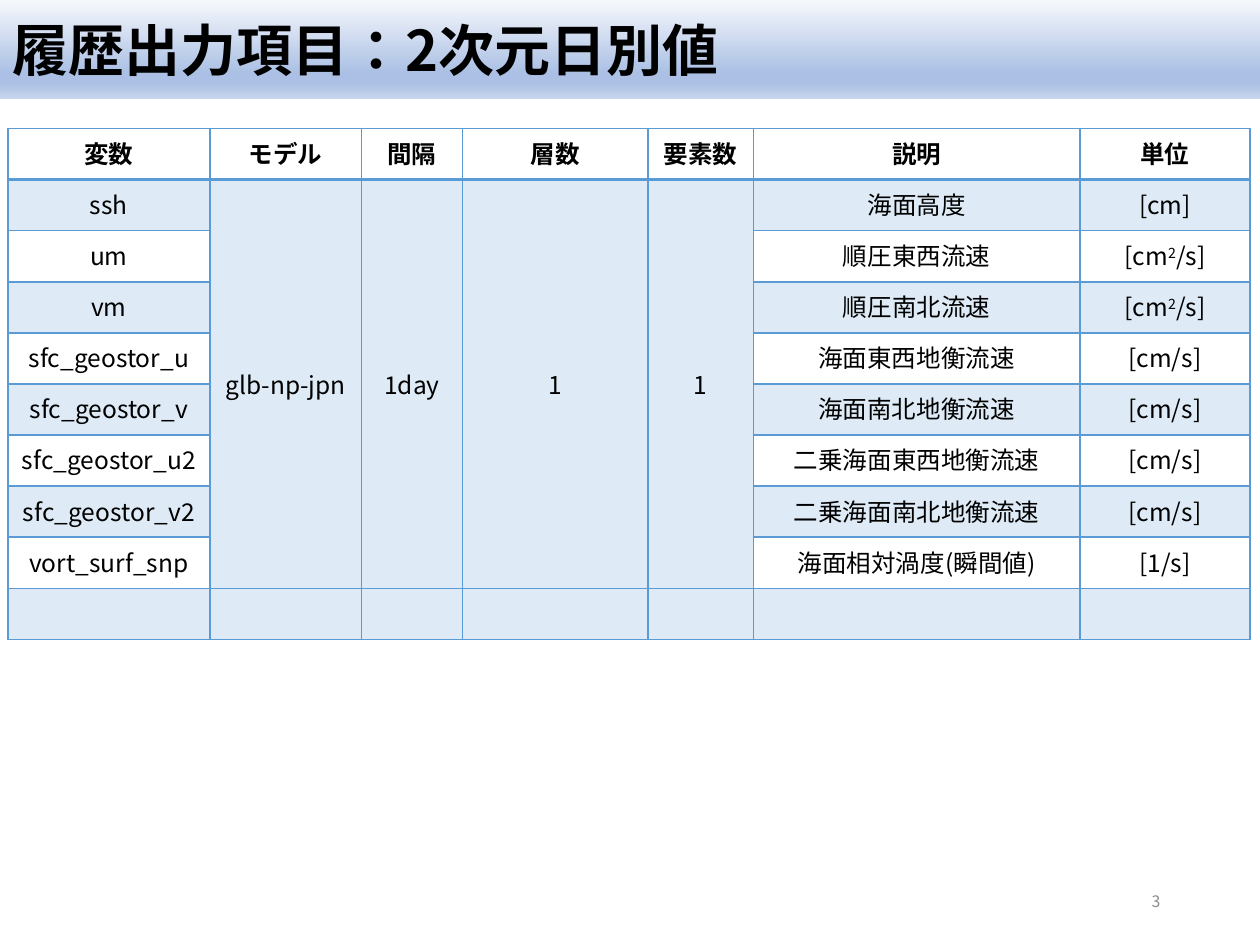
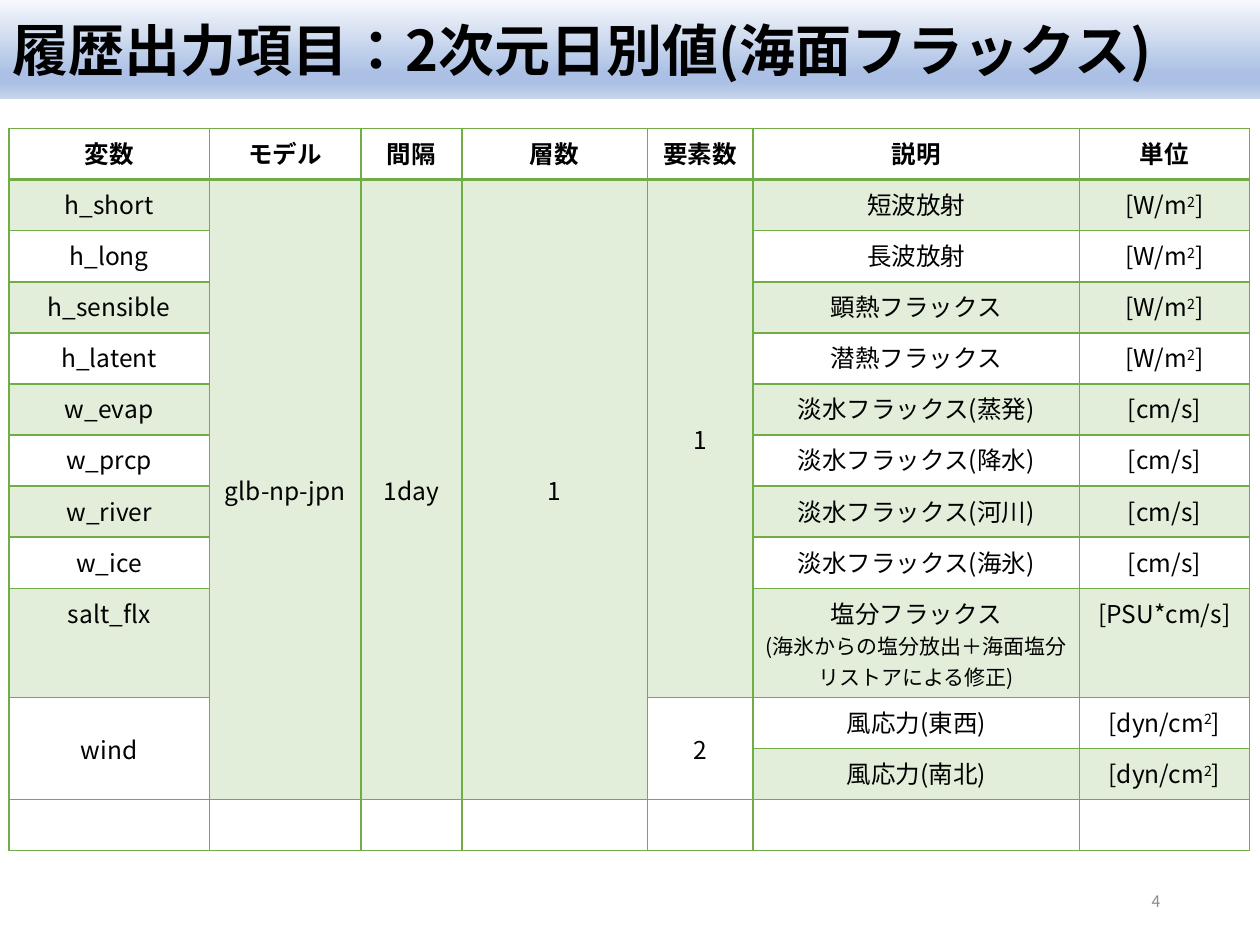
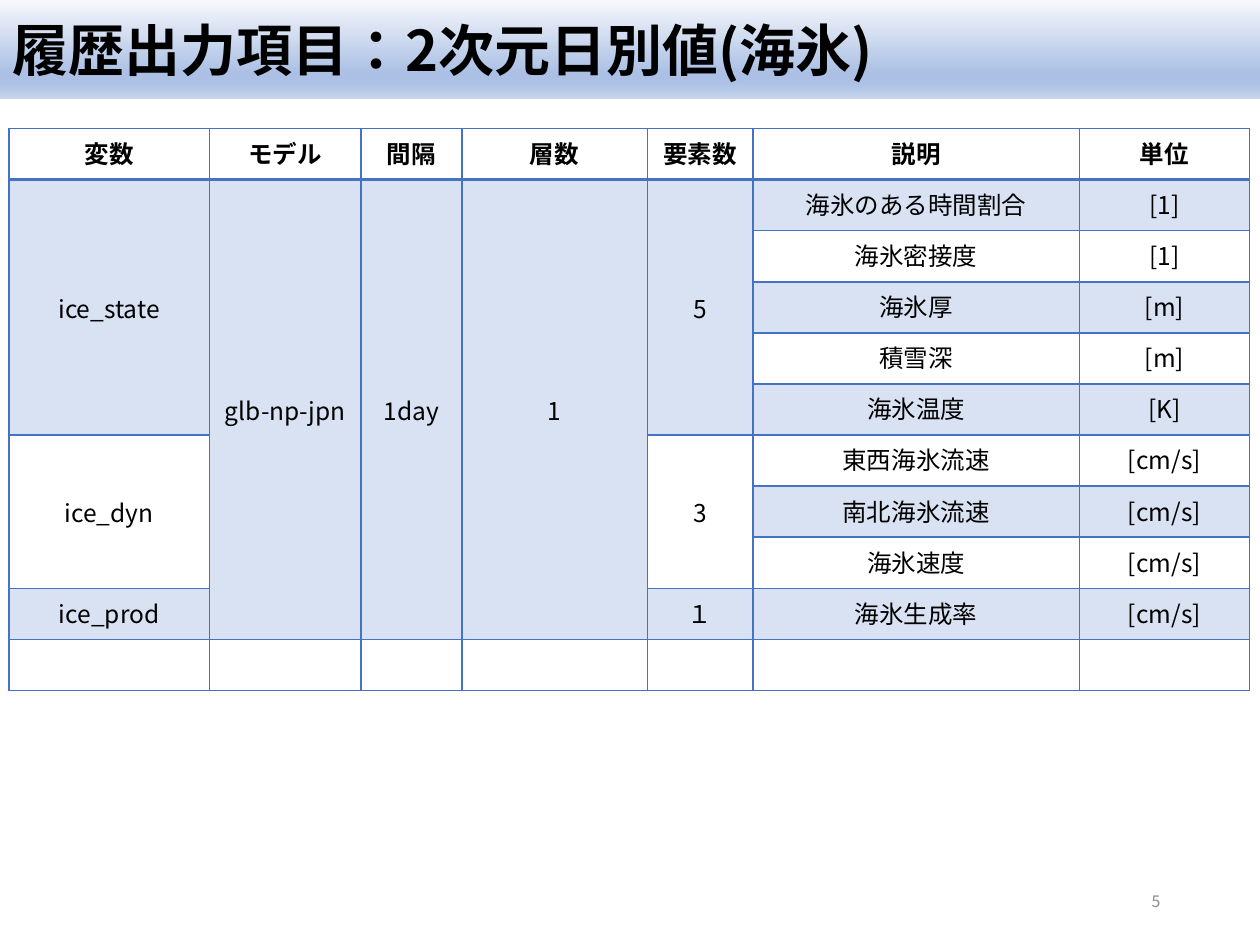
import pptx
import pptx.util
import pptx.dml.color
import pptx.enum.lang
import pptx.enum.text
import pptx.oxml
import pptx.oxml.ns
from lxml import etree

Cm, Pt, qn = pptx.util.Cm, pptx.util.Pt, pptx.oxml.ns.qn
ALIGN, ANCHOR = pptx.enum.text.PP_ALIGN, pptx.enum.text.MSO_ANCHOR

# Content: a None cell continues the cell above; ^2 is a superscript
HEADERS = ["変数", "モデル", "間隔", "層数", "要素数", "説明", "単位"]
MODEL = ("glb-np-jpn", "1day", "1")
SHEETS = [
    {"title": "履歴出力項目：2次元日別値", "number": 3, "accent": "sky",
     "left": 0.16, "first": 4.07, "rows": [
         ("ssh", "1", "海面高度", "[cm]"),
         ("um", None, "順圧東西流速", "[cm^2/s]"),
         ("vm", None, "順圧南北流速", "[cm^2/s]"),
         ("sfc_geostor_u", None, "海面東西地衡流速", "[cm/s]"),
         ("sfc_geostor_v", None, "海面南北地衡流速", "[cm/s]"),
         ("sfc_geostor_u2", None, "二乗海面東西地衡流速", "[cm/s]"),
         ("sfc_geostor_v2", None, "二乗海面南北地衡流速", "[cm/s]"),
         ("vort_surf_snp", None, "海面相対渦度(瞬間値)", "[1/s]")]},
    {"title": "履歴出力項目：2次元日別値(海面フラックス)", "number": 4, "accent": "green",
     "left": 0.18, "first": 4.04, "rows": [
         ("h_short", "1", "短波放射", "[W/m^2]"),
         ("h_long", None, "長波放射", "[W/m^2]"),
         ("h_sensible", None, "顕熱フラックス", "[W/m^2]"),
         ("h_latent", None, "潜熱フラックス", "[W/m^2]"),
         ("w_evap", None, "淡水フラックス(蒸発)", "[cm/s]"),
         ("w_prcp", None, "淡水フラックス(降水)", "[cm/s]"),
         ("w_river", None, "淡水フラックス(河川)", "[cm/s]"),
         ("w_ice", None, "淡水フラックス(海氷)", "[cm/s]"),
         ("salt_flx", None,
          "塩分フラックス\n(海氷からの塩分放出＋海面塩分リストアによる修正)", "[PSU*cm/s]"),
         ("wind", "2", "風応力(東西)", "[dyn/cm^2]"),
         (None, None, "風応力(南北)", "[dyn/cm^2]")]},
    {"title": "履歴出力項目：2次元日別値(海氷)", "number": 5, "accent": "blue",
     "left": 0.18, "first": 4.04, "rows": [
         ("ice_state", "5", "海氷のある時間割合", "[1]"),
         (None, None, "海氷密接度", "[1]"),
         (None, None, "海氷厚", "[m]"),
         (None, None, "積雪深", "[m]"),
         (None, None, "海氷温度", "[K]"),
         ("ice_dyn", "3", "東西海氷流速", "[cm/s]"),
         (None, None, "南北海氷流速", "[cm/s]"),
         (None, None, "海氷速度", "[cm/s]"),
         ("ice_prod", "１", "海氷生成率", "[cm/s]")]},
]

# Shared style
COLORS = {"text": "000000", "number": "8C8C8C",
          "sky": "5B9BD5", "green": "70AD47", "blue": "4472C4"}
BAND_STOPS = [(0, "F6F8FC"), (74, "ABC0E4"), (83, "ABC0E4"), (100, "C7D5ED")]
FONT = "Noto Sans CJK JP"
OTHER_WIDTHS = [3.06, 2.03, 3.74, 2.13, 6.58, 3.43]
ROW_HEIGHT = 1.03
NOTED_ROW_HEIGHT = 2.2
TABLE_TOP = 2.59


def style(para, size, color="text", bold=False, align=ALIGN.LEFT):
    para.alignment = align
    font = para.font
    font.size, font.bold, font.name = Pt(size), bold, FONT
    font.language_id = pptx.enum.lang.MSO_LANGUAGE_ID.JAPANESE
    font.color.rgb = pptx.dml.color.RGBColor.from_string(COLORS[color])
    defaults = para._p.pPr.find(qn("a:defRPr"))
    etree.SubElement(defaults, qn("a:ea"), typeface=FONT)
    for span in para.runs:
        span.font.language_id = font.language_id


def place(shape, left, top, width, height):
    shape.left, shape.top = Cm(left), Cm(top)
    shape.width, shape.height = Cm(width), Cm(height)


def add_title(page, text):
    title = page.shapes.title
    place(title, 0, 0, 25.4, 2)
    stops = "".join(f'<a:gs pos="{pos * 1000}"><a:srgbClr val="{color}"/></a:gs>'
                    for pos, color in BAND_STOPS)
    title._element.spPr.append(pptx.oxml.parse_xml(
        f'<a:gradFill {pptx.oxml.ns.nsdecls("a")}><a:gsLst>{stops}</a:gsLst>'
        '<a:lin ang="5400000" scaled="0"/></a:gradFill>'))
    frame = title.text_frame
    frame.text = text
    frame.auto_size = pptx.enum.text.MSO_AUTO_SIZE.NONE
    frame.vertical_anchor = ANCHOR.MIDDLE
    style(frame.paragraphs[0], 32, bold=True)


def add_number(page, number):
    box = page.shapes.add_textbox(Cm(16.81), Cm(17.65), Cm(6.83), Cm(1.02))
    frame = box.text_frame
    frame.word_wrap = True
    frame.vertical_anchor = ANCHOR.MIDDLE
    frame.text = str(number)
    style(frame.paragraphs[0], 9, "number", align=ALIGN.RIGHT)


def write_cell(cell, text, bold):
    for index, line in enumerate(text.split("\n")):
        frame = cell.text_frame
        para = frame.add_paragraph() if index else frame.paragraphs[0]
        before, power, after = line.partition("^2")
        for part in filter(None, (before, power[1:], after)):
            span = para.add_run()
            span.text = part
            if power and part == "2":
                span._r.get_or_add_rPr().set("baseline", "30000")
        style(para, 12 if index else 14, bold=bold, align=ALIGN.CENTER)
        if not line:
            para._p.get_or_add_endParaRPr().set("sz", "1400")


def paint_cell(cell, row, accent):
    props = cell._tc.get_or_add_tcPr()
    heavy = {"lnB": row == 0, "lnT": row == 1}
    for side in ("lnL", "lnR", "lnT", "lnB"):
        width = Pt(2 if heavy.get(side) else 1)
        line = etree.SubElement(props, qn("a:" + side), w=str(width))
        fill = etree.SubElement(line, qn("a:solidFill"))
        etree.SubElement(fill, qn("a:srgbClr"), val=accent)
    if row % 2:
        cell.fill.solid()
        cell.fill.fore_color.rgb = pptx.dml.color.RGBColor.from_string(accent)
        shade = props.find(qn("a:solidFill")).find(qn("a:srgbClr"))
        etree.SubElement(shade, qn("a:alpha"), val="20000")
    else:
        cell.fill.background()


def add_variables(page, sheet):
    # Header, data with the shared model columns, and one empty closing row
    grid = [HEADERS]
    for index, (name, count, meaning, unit) in enumerate(sheet["rows"]):
        model = (None,) * len(MODEL) if index else MODEL
        grid.append([name, *model, count, meaning, unit])
    grid.append([""] * len(HEADERS))

    # A row whose description carries a note is taller
    heights = [NOTED_ROW_HEIGHT if any("\n" in (text or "") for text in texts)
               else ROW_HEIGHT for texts in grid]
    widths = [sheet["first"]] + OTHER_WIDTHS
    frame = page.shapes.add_table(len(grid), len(widths), Cm(sheet["left"]), Cm(TABLE_TOP),
                                  Cm(sum(widths)), Cm(sum(heights)))
    table = frame.table
    table.first_row = table.horz_banding = False
    for column, width in zip(table.columns, widths):
        column.width = Cm(width)
    for row, height in zip(table.rows, heights):
        row.height = Cm(height)

    for row, texts in enumerate(grid):
        for col, text in enumerate(texts):
            cell = table.cell(row, col)
            paint_cell(cell, row, COLORS[sheet["accent"]])
            write_cell(cell, text or "", bold=row == 0)
            if text is None:
                continue
            last = row
            while last + 1 < len(grid) and grid[last + 1][col] is None:
                last += 1
            if last > row:
                cell.merge(table.cell(last, col))
                cell.vertical_anchor = ANCHOR.MIDDLE


def main():
    deck = pptx.Presentation()
    deck.slide_width, deck.slide_height = Cm(25.4), Cm(19.05)
    for sheet in SHEETS:
        page = deck.slides.add_slide(deck.slide_layouts[5])
        add_title(page, sheet["title"])
        add_number(page, sheet["number"])
        add_variables(page, sheet)
    deck.save("out.pptx")


if __name__ == "__main__":
    main()
